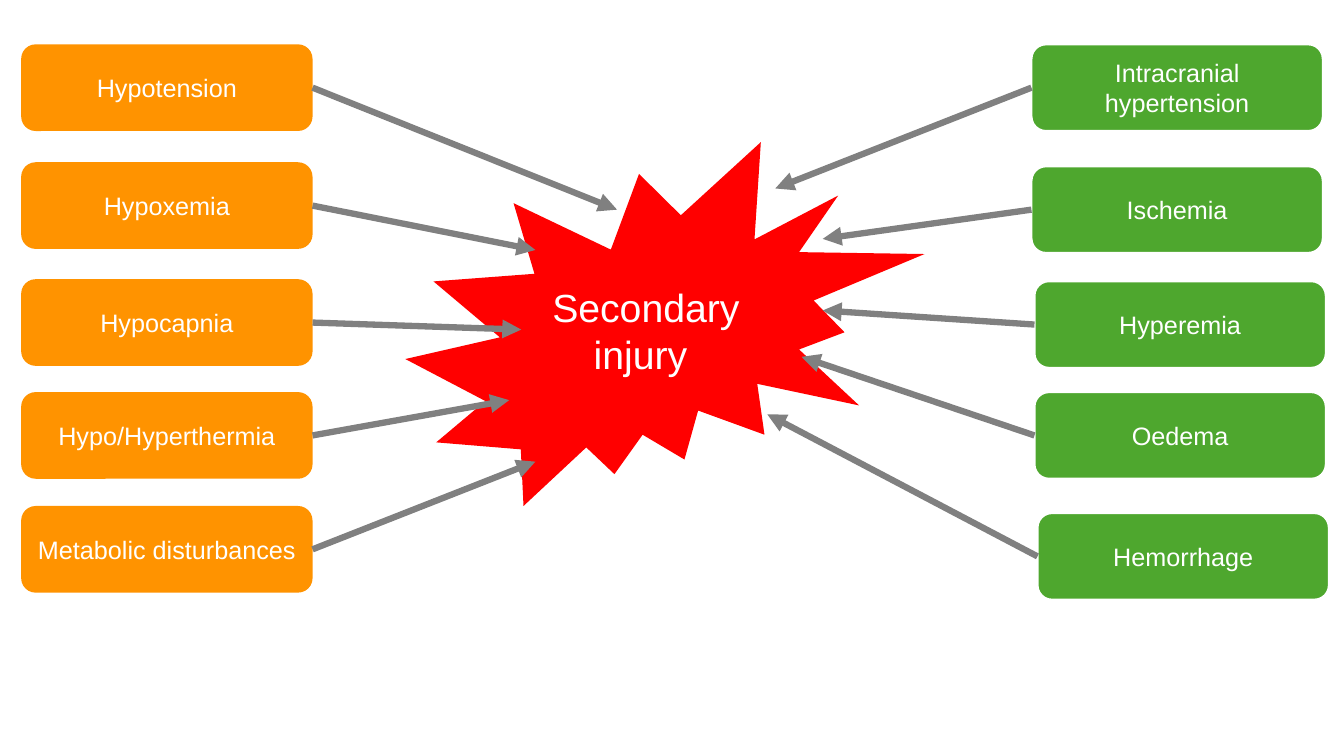
from dataclasses import dataclass

from lxml import etree
from pptx import Presentation
from pptx.dml.color import RGBColor
from pptx.enum.shapes import MSO_CONNECTOR, MSO_SHAPE
from pptx.enum.text import MSO_ANCHOR, PP_ALIGN
from pptx.oxml.ns import qn
from pptx.shapes.autoshape import Shape
from pptx.slide import Slide
from pptx.util import Inches, Pt

ROUND = MSO_SHAPE.ROUNDED_RECTANGLE
BURST = MSO_SHAPE.EXPLOSION2
STRAIGHT = MSO_CONNECTOR.STRAIGHT
MIDDLE = MSO_ANCHOR.MIDDLE
CENTER = PP_ALIGN.CENTER

ORANGE = RGBColor(0xFF, 0x93, 0x00)
GREEN = RGBColor(0x4E, 0xA7, 0x2E)
RED = RGBColor(0xFF, 0x00, 0x00)
GRAY = RGBColor(0x80, 0x80, 0x80)
WHITE = RGBColor(0xFF, 0xFF, 0xFF)

FONT = "Arial"
BOX_W, BOX_H = 2.89, 0.86


@dataclass(frozen=True)
class Cause:
    text: str
    left: float
    top: float
    tip_x: float
    tip_y: float


# Systemic causes on the left, intracranial causes on the right
SYSTEMIC = [
    Cause("Hypotension", 0.21, 0.44, 6.12, 2.08),
    Cause("Hypoxemia", 0.21, 1.61, 5.31, 2.48),
    Cause("Hypocapnia", 0.21, 2.77, 5.17, 3.27),
    Cause("Hypo/Hyperthermia", 0.21, 3.89, 5.05, 3.97),
    Cause("Metabolic disturbances", 0.21, 5.02, 5.31, 4.58),
]
CRANIAL = [
    Cause("Intracranial hypertension", 10.23, 0.44, 7.69, 1.87),
    Cause("Ischemia", 10.23, 1.65, 8.16, 2.37),
    Cause("Hyperemia", 10.26, 2.79, 8.16, 3.08),
    Cause("Oedema", 10.26, 3.89, 7.95, 3.54),
    Cause("Hemorrhage", 10.29, 5.09, 7.61, 4.11),
]


def add_block(slide: Slide, kind: MSO_SHAPE, left: float, top: float,
              width: float, height: float, fill: RGBColor,
              text: str, size: int) -> Shape:
    block = slide.shapes.add_shape(
        kind, Inches(left), Inches(top), Inches(width), Inches(height))
    block.shadow.inherit = False
    block.fill.solid()
    block.fill.fore_color.rgb = fill
    block.line.fill.background()
    frame = block.text_frame
    frame.word_wrap = True
    frame.vertical_anchor = MIDDLE
    para = frame.paragraphs[0]
    para.alignment = CENTER
    run = para.add_run()
    run.text = text
    run.font.name = FONT
    run.font.size = Pt(size)
    run.font.color.rgb = WHITE
    return block


def add_cause(slide: Slide, cause: Cause, fill: RGBColor) -> Shape:
    return add_block(slide, ROUND, cause.left, cause.top, BOX_W, BOX_H,
                     fill, cause.text, 18)


def add_arrow(slide: Slide, cause: Cause) -> None:
    # Leave from the middle of the side that faces the burst
    start = cause.left
    if cause.tip_x > start:
        start += BOX_W
    arrow = slide.shapes.add_connector(
        STRAIGHT, Inches(start), Inches(cause.top + BOX_H / 2),
        Inches(cause.tip_x), Inches(cause.tip_y))
    arrow.line.color.rgb = GRAY
    arrow.line.width = Pt(4.5)
    etree.SubElement(arrow.line._get_or_add_ln(), qn("a:tailEnd"),
                     type="triangle")
    etree.SubElement(arrow._element.spPr, qn("a:effectLst"))


def main() -> None:
    deck = Presentation()
    deck.slide_width = Inches(13.33)
    deck.slide_height = Inches(7.5)
    slide = deck.slides.add_slide(deck.slide_layouts[6])

    # Cause boxes
    for cause in SYSTEMIC:
        add_cause(slide, cause, ORANGE)
    for cause in CRANIAL:
        box = add_cause(slide, cause, GREEN)
        box.line.color.rgb = WHITE
        box.line.width = Pt(1.5)

    # Central burst
    add_block(slide, BURST, 4.02, 1.41, 5.15, 3.61, RED,
              "Secondary injury ", 28)

    # Arrows to the burst
    for cause in SYSTEMIC + CRANIAL:
        add_arrow(slide, cause)

    deck.save("out.pptx")


if __name__ == "__main__":
    main()
